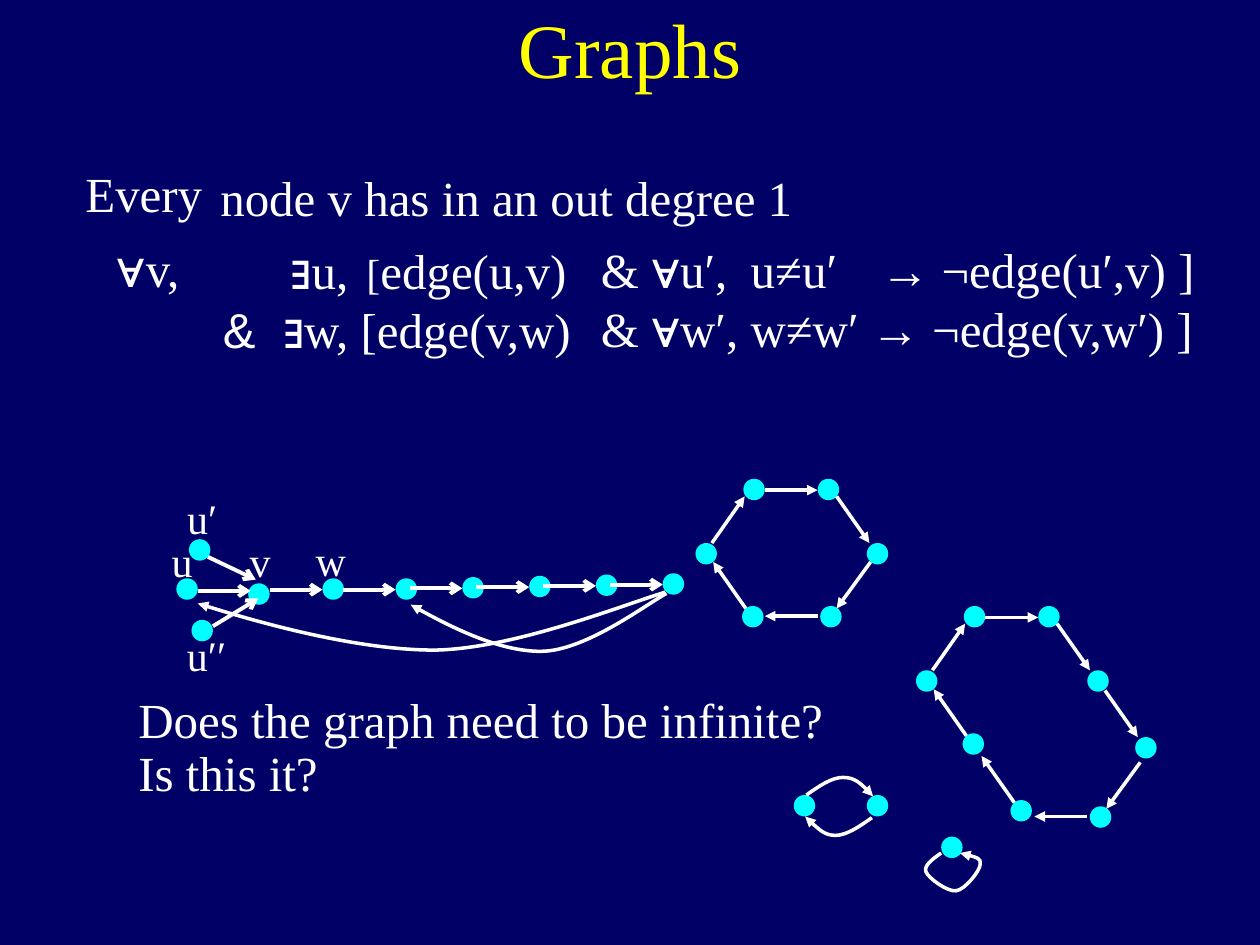
from dataclasses import dataclass

from lxml import etree
from pptx import Presentation
from pptx import util as u
from pptx.dml.color import RGBColor
from pptx.enum import shapes, text
from pptx.oxml import ns


@dataclass(frozen=True)
class Theme:
    back: str = "000066"
    title: str = "FFFF00"
    ink: str = "FFFFFF"
    node: str = "00FFFF"
    serif: str = "Times New Roman"
    sans: str = "Arial"
    head: int = 44
    body: int = 28
    small: int = 24
    thick: float = 2.25
    thin: float = 2


T = Theme()
DOT = 0.17  # node diameter on the inch grid

# Arrow directions around a ring
RIGHT, LEFT = (0.42, 0), (-0.42, 0)
DOWN, BACK = (0.26, 0.37), (-0.27, 0.37)
RISE, CLIMB = (0.26, -0.37), (-0.26, -0.37)


def grid(n):
    """Turn a place on the inch grid into a length."""
    return u.Cm(2.54 * n)


def rgb(code):
    return RGBColor.from_string(code)


def add_text(slide, box, paras, size=T.body, color=T.ink, align=None,
             wrap=False, tabs=()):
    """Each paragraph is a list of (text, font, size) runs or plain text."""
    frame = slide.shapes.add_textbox(*map(grid, box)).text_frame
    frame.word_wrap = wrap
    frame.auto_size = text.MSO_AUTO_SIZE.SHAPE_TO_FIT_TEXT
    for i, runs in enumerate(paras):
        para = frame.add_paragraph() if i else frame.paragraphs[0]
        para.alignment = align
        if isinstance(runs, str):
            runs = [(runs, T.serif, size)]
        for words, face, pts in runs:
            run = para.add_run()
            run.text = words
            run.font.name, run.font.size = face, u.Pt(pts)
            run.font.color.rgb = rgb(color)
        if tabs:
            stops = etree.SubElement(para._p.get_or_add_pPr(),
                                     ns.qn("a:tabLst"))
            for stop in tabs[i]:
                etree.SubElement(stops, ns.qn("a:tab"),
                                 pos=str(grid(stop)), algn="l")
    return frame


def add_label(slide, words, x, y, wide):
    add_text(slide, (x, y, wide, 0.5), [words], T.small,
             align=text.PP_ALIGN.CENTER)


def add_node(slide, x, y):
    dot = slide.shapes.add_shape(shapes.MSO_SHAPE.OVAL, grid(x), grid(y),
                                 grid(DOT), grid(DOT))
    dot.shadow.inherit = False
    dot.fill.solid()
    dot.fill.fore_color.rgb = rgb(T.node)
    dot.line.fill.background()


def set_line(shape, width, head):
    shape.line.color.rgb = rgb(T.ink)
    shape.line.width = u.Pt(width)
    etree.SubElement(shape.line._get_or_add_ln(), ns.qn("a:tailEnd"),
                     type=head)


def add_arrow(slide, x, y, step, width=T.thin, head="triangle"):
    line = slide.shapes.add_connector(
        shapes.MSO_CONNECTOR.STRAIGHT, grid(x), grid(y),
        grid(x + step[0]), grid(y + step[1]))
    set_line(line, width, head)
    etree.SubElement(line._element.spPr, ns.qn("a:effectLst"))


def add_curve(slide, *points):
    """Draw Bezier pieces: a start, then two controls and an end for each."""
    spots = [(grid(x), grid(y)) for x, y in points]
    build = slide.shapes.build_freeform(*spots[0])
    build.add_line_segments(spots[1:], close=False)
    curve = build.convert_to_shape()
    curve.shadow.inherit = False
    curve.fill.background()
    set_line(curve, T.thin, "triangle")
    # Gather every three straight segments into one cubic segment
    legs = list(curve._element.iter(ns.qn("a:lnTo")))
    for i in range(0, len(legs), 3):
        cubic = etree.Element(ns.qn("a:cubicBezTo"))
        legs[i].addprevious(cubic)
        for leg in legs[i:i + 3]:
            cubic.append(leg[0])
            leg.getparent().remove(leg)


def add_ring(slide, top=(0, 0), low=(0, 0)):
    """Draw six nodes; the lower right corner can be moved further."""
    upper = [(5.52, 4.31), (5.9, 3.8), (6.49, 3.8), (6.88, 4.31),
             (5.89, 4.81)]
    sides = [(6.07, 3.89, RIGHT), (6.64, 3.94, DOWN),
             (5.65, 4.31, RISE), (5.92, 4.83, CLIMB)]
    lower = [(6.51, 4.81)]
    turns = [(6.91, 4.46, BACK), (6.49, 4.89, LEFT)]
    for (dx, dy), nodes, arrows in ((top, upper, sides), (low, lower, turns)):
        for x, y in nodes:
            add_node(slide, x + dx, y + dy)
        for x, y, step in arrows:
            add_arrow(slide, x + dx, y + dy, step)


def add_words(slide):
    title = add_text(slide, (0, -0.25, 10, 1.25), ["Graphs"], T.head,
                     T.title, text.PP_ALIGN.CENTER, wrap=True)
    title.auto_size = text.MSO_AUTO_SIZE.NONE
    title.vertical_anchor = text.MSO_ANCHOR.MIDDLE

    for words, x, y, wide in (
            ("Every", 0.58, 1.25, 1.24),
            ("node v has in an out degree 1", 1.65, 1.28, 4.79),
            ("Does the graph need to be infinite?", 1, 5.42, 5.76),
            ("Is this it?", 1, 5.84, 1.64)):
        add_text(slide, (x, y, wide, 0.57), [words])

    # Formula
    def sans(words):
        return words, T.sans, T.body

    def serif(words, size=T.body):
        return words, T.serif, size

    add_text(slide, (0.83, 1.84, 1.11, 0.57), [[sans("∀"), serif("v,")]],
             wrap=True)
    add_text(slide, (1.67, 1.86, 3.17, 1.04),
             [[sans("\t∃"), serif("u,"), serif("\t[", T.small),
               serif("edge(u,v)")],
              [sans("&\t∃"), serif("w, [edge(v,w)")]],
             wrap=True, tabs=((0.54, 1.14), (0.48,)))
    add_text(slide, (4.67, 1.85, 5.2, 1.04),
             [[serif("& "), sans("∀"), serif("u′,\tu≠u′\t→ ¬edge(u′,v) ]")],
              [serif("& "), sans("∀"), serif("w′, w≠w′ → ¬edge(v,w′) ]")]],
             wrap=True, tabs=((1.19, 2.22), ()))


def add_chain(slide):
    for label in (("v", 1.88, 4.2, 0.37), ("w", 2.4, 4.19, 0.45),
                  ("u", 1.26, 4.2, 0.37), ("u′", 1.38, 3.86, 0.45),
                  ("u′′", 1.37, 4.95, 0.54)):
        add_label(slide, *label)

    # Named nodes, then the even tail of the chain
    nodes = [(1.4, 4.59), (1.97, 4.63), (2.56, 4.59), (1.5, 4.28),
             (1.52, 4.92)]
    arrows = [(1.57, 4.69, RIGHT), (2.14, 4.68, RIGHT),
              (1.65, 4.42, (0.38, 0.18)), (1.69, 4.97, (0.36, -0.22))]
    for i in range(5):
        nodes.append((3.14 + 0.53 * i, 4.59 - 0.01 * i))
        arrows.append((2.72 + 0.53 * i, 4.68 - 0.01 * i, RIGHT))
    for node in nodes:
        add_node(slide, *node)
    for arrow in arrows:
        add_arrow(slide, *arrow, T.thick, "arrow")

    # Edges back into the chain
    add_curve(slide, (5.29, 4.71), (5.11, 4.81), (4.64, 5.17), (4.29, 5.17),
              (3.95, 5.17), (3.47, 4.92), (3.26, 4.8))
    add_curve(slide, (5.28, 4.7), (4.95, 4.8), (4.08, 5.15), (3.45, 5.16),
              (2.82, 5.16), (1.95, 4.91), (1.57, 4.79))


def add_loops(slide):
    # Six-node and eight-node rings
    add_ring(slide)
    add_ring(slide, (1.75, 1.01), (2.14, 1.59))
    for x, y in ((9.01, 5.85), (8.02, 6.35)):
        add_node(slide, x, y)
    add_arrow(slide, 8.77, 5.48, DOWN)
    add_arrow(slide, 8.05, 6.37, CLIMB)

    # Two-node loop and self loop
    for x, y in ((6.3, 6.31), (6.88, 6.31), (7.47, 6.64)):
        add_node(slide, x, y)
    add_curve(slide, (6.4, 6.31), (6.5, 6.24), (6.6, 6.17), (6.69, 6.17),
              (6.78, 6.17), (6.86, 6.24), (6.93, 6.32))
    add_curve(slide, (6.92, 6.49), (6.82, 6.56), (6.72, 6.63), (6.63, 6.63),
              (6.55, 6.63), (6.47, 6.56), (6.39, 6.48))
    add_curve(slide, (7.47, 6.77), (7.4, 6.82), (7.33, 6.87), (7.35, 6.92),
              (7.37, 6.97), (7.52, 7.08), (7.59, 7.07),
              (7.66, 7.06), (7.78, 6.91), (7.78, 6.86),
              (7.79, 6.81), (7.7, 6.79), (7.62, 6.77))


def main():
    deck = Presentation()
    deck.slide_width, deck.slide_height = u.Cm(25.4), u.Cm(19.05)
    slide = deck.slides.add_slide(deck.slide_layouts[6])
    slide.background.fill.solid()
    slide.background.fill.fore_color.rgb = rgb(T.back)
    add_words(slide)
    add_chain(slide)
    add_loops(slide)
    deck.save("out.pptx")


if __name__ == "__main__":
    main()
